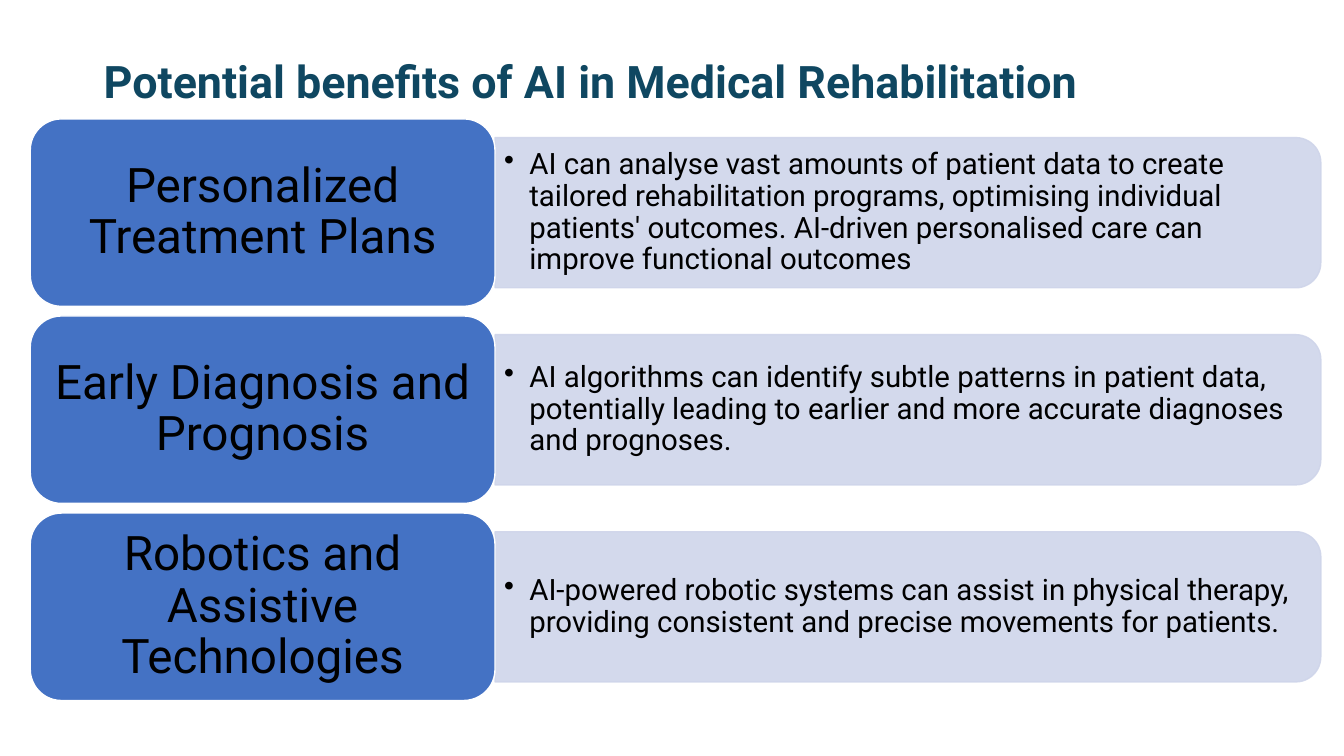
from dataclasses import dataclass

from lxml.etree import SubElement
from pptx import Presentation
from pptx.dml.color import RGBColor
from pptx.enum.shapes import MSO_SHAPE
from pptx.enum.text import MSO_ANCHOR, PP_ALIGN
from pptx.oxml.ns import qn
from pptx.util import Inches, Pt


@dataclass(frozen=True)
class Theme:
    font: str = "Roboto"
    title_color: RGBColor = RGBColor(0x0F, 0x47, 0x61)
    text_color: RGBColor = RGBColor(0, 0, 0)
    label_fill: RGBColor = RGBColor(0x44, 0x72, 0xC4)
    label_line: RGBColor = RGBColor(0xFF, 0xFF, 0xFF)
    panel_color: RGBColor = RGBColor(0xCF, 0xD5, 0xEA)
    panel_opacity: int = 90
    title_size: int = 32
    label_size: int = 34
    detail_size: int = 21


THEME = Theme()

TITLE = "Potential benefits of AI in Medical Rehabilitation"
BENEFITS = [
    ("Personalized Treatment Plans",
     "AI can analyse vast amounts of patient data to create tailored rehabilitation "
     "programs, optimising individual patients' outcomes. AI-driven personalised care "
     "can improve functional outcomes"),
    ("Early Diagnosis and Prognosis",
     "AI algorithms can identify subtle patterns in patient data, potentially leading "
     "to earlier and more accurate diagnoses and prognoses."),
    ("Robotics and Assistive Technologies",
     "AI-powered robotic systems can assist in physical therapy, providing consistent "
     "and precise movements for patients."),
]

ROW_LEFT, ROW_TOP, ROW_WIDTH, ROW_HEIGHT = 0.3, 1.18, 12.8, 1.86
ROW_PITCH = 1.955
LABEL_WIDTH = 4.61
PANEL_HEIGHT = 1.49
DETAIL_HEIGHT = 1.34


def write_text(shape, text, size, color, margins=(0.1, 0.05), bold=False):
    """Fill the shape with one wrapped paragraph and return that paragraph."""
    frame = shape.text_frame
    frame.word_wrap = True
    frame.margin_left = frame.margin_right = Inches(margins[0])
    frame.margin_top = frame.margin_bottom = Inches(margins[1])
    frame.text = text
    paragraph = frame.paragraphs[0]
    font = paragraph.runs[0].font
    font.name, font.size, font.bold = THEME.font, Pt(size), bold
    font.color.rgb = color
    return paragraph


def paint(shape, fill, line):
    shape.shadow.inherit = False
    shape.fill.solid()
    shape.fill.fore_color.rgb = fill
    shape.line.color.rgb = line
    shape.line.width = Pt(1)


def set_opacity(shape, percent):
    for color in shape._element.spPr.iter(qn("a:srgbClr")):
        SubElement(color, qn("a:alpha"), val=str(percent * 1000))


def add_bullet(paragraph, indent):
    properties = paragraph._p.get_or_add_pPr()
    properties.set("marL", str(Inches(indent)))
    properties.set("indent", str(-Inches(indent)))
    SubElement(properties, qn("a:buChar"), char="•")


def add_title(slide, left, top, width, height):
    box = slide.shapes.add_textbox(Inches(left), Inches(top), Inches(width), Inches(height))
    write_text(box, TITLE, THEME.title_size, THEME.title_color, bold=True)


def add_panel(slide, left, top, width, height):
    """Draw a bar rounded on its right side: a top-rounded shape turned by 90 degrees."""
    offset = (width - height) / 2
    panel = slide.shapes.add_shape(
        MSO_SHAPE.ROUND_2_SAME_RECTANGLE, Inches(left + offset), Inches(top - offset),
        Inches(height), Inches(width))
    panel.rotation = 90
    paint(panel, THEME.panel_color, THEME.panel_color)
    set_opacity(panel, THEME.panel_opacity)


def add_detail(slide, text, left, top, width, height):
    box = slide.shapes.add_textbox(Inches(left), Inches(top), Inches(width), Inches(height))
    paragraph = write_text(box, text, THEME.detail_size, THEME.text_color, (0.09, 0.04))
    box.text_frame.vertical_anchor = MSO_ANCHOR.MIDDLE
    paragraph.line_spacing = 0.9
    add_bullet(paragraph, 0.25)


def add_label(slide, text, left, top, width, height):
    label = slide.shapes.add_shape(
        MSO_SHAPE.ROUNDED_RECTANGLE, Inches(left), Inches(top), Inches(width), Inches(height))
    paint(label, THEME.label_fill, THEME.label_line)
    paragraph = write_text(label, text, THEME.label_size, THEME.text_color, (0.14, 0.07))
    label.text_frame.vertical_anchor = MSO_ANCHOR.MIDDLE
    paragraph.alignment = PP_ALIGN.CENTER
    paragraph.line_spacing = 0.9


def add_benefit(slide, name, detail, left, top, width, height):
    panel_left = left + LABEL_WIDTH
    panel_width = width - LABEL_WIDTH
    middle = top + height / 2
    add_panel(slide, panel_left, middle - PANEL_HEIGHT / 2, panel_width, PANEL_HEIGHT)
    add_detail(slide, detail, panel_left, middle - DETAIL_HEIGHT / 2,
               panel_width - 0.07, DETAIL_HEIGHT)
    add_label(slide, name, left, top, LABEL_WIDTH, height)


def main():
    presentation = Presentation()
    presentation.slide_width, presentation.slide_height = Inches(13.33), Inches(7.5)
    slide = presentation.slides.add_slide(presentation.slide_layouts[6])
    for row, (name, detail) in enumerate(BENEFITS):
        add_benefit(slide, name, detail, ROW_LEFT, ROW_TOP + row * ROW_PITCH,
                    ROW_WIDTH, ROW_HEIGHT)
    add_title(slide, 0.93, 0.48, 10.51, 0.64)
    presentation.save("out.pptx")


if __name__ == "__main__":
    main()
